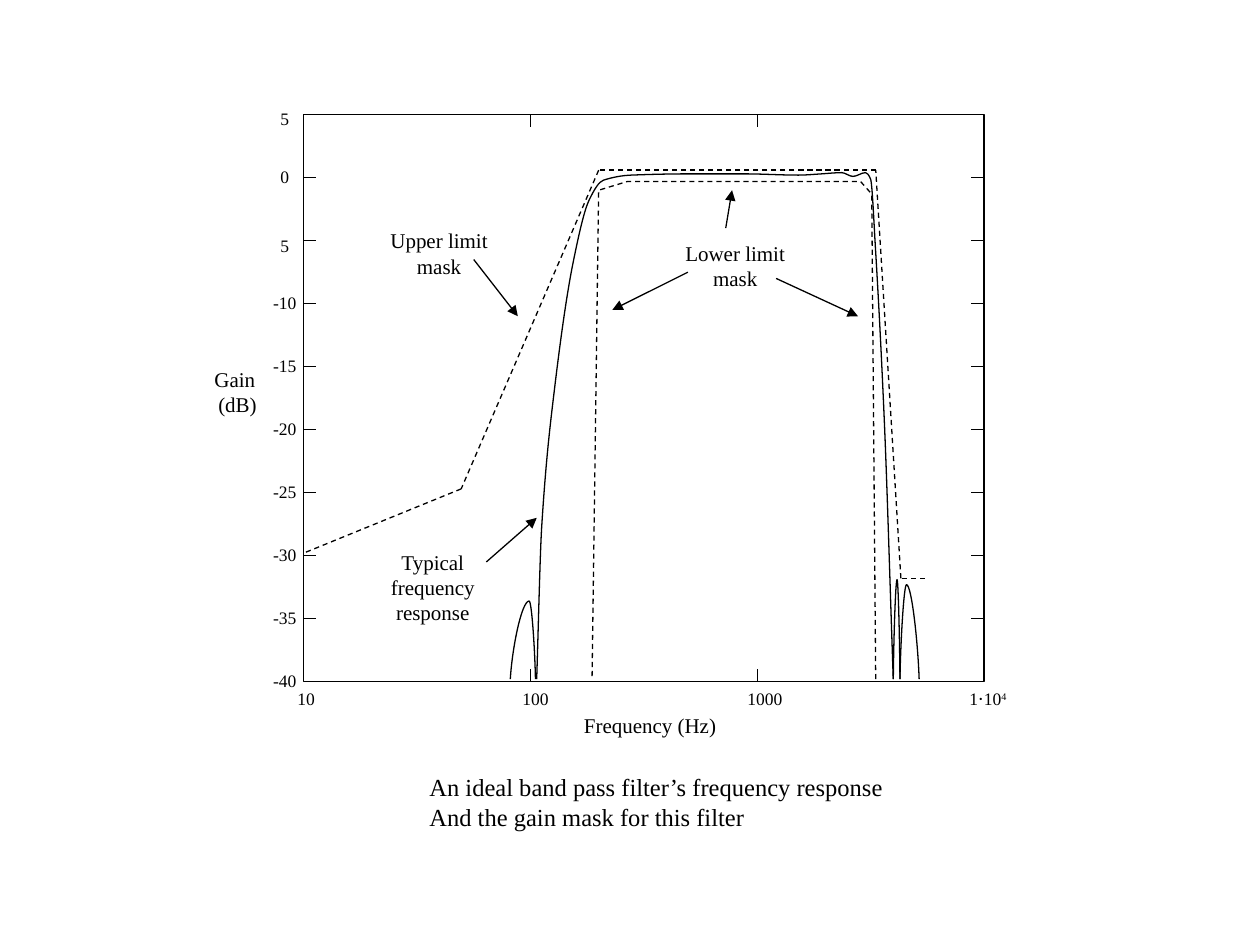
import itertools
import math
import pptx
import pptx.util
import pptx.dml.color
import pptx.enum.dml
import pptx.enum.shapes
import pptx.enum.text
import pptx.oxml
import pptx.oxml.ns

INCH = 2.54
FONT = "Times New Roman"
COLORS = {"ink": "000000"}

LEFT, TOP, DECADE, STEP, TICK = 2.41, 0.91, 1.8, 0.5, 0.1
LOW_HZ, DECADES = 10, 3
TOP_DB, STEP_DB, STEPS = 5, 5, 9
WIDE, HIGH = DECADE * DECADES, STEP * STEPS
FLOOR = -39.8

PASS_BAND = [
    (106.6, FLOOR), (112.2, -27.7), (127.5, -16.9), (154.5, -6.7), (182.4, -1.7),
    (210, -0.2), (278, 0.2), (495, 0.3), (880, 0.3), (1525, 0.2), (1920, 0.3),
    (2356, 0.4), (2644, 0.1), (3005, 0.4), (3162, -0.1), (3328, -5.8),
    (3640, -19.5), (3981, FLOOR),
]
LOBES = [
    {"start": 81.5, "peak": (98.7, -33.6), "end": 105.2},
    {"start": 3981, "peak": (4137, -31.9), "end": 4258},
    {"start": 4258, "peak": (4553, -32.3), "end": 5175},
]
UPPER = [(5480, -31.8), (4300, -31.8), (3330, 0.6), (200, 0.6), (49.5, -24.7), (10, -29.8)]
LOWER = [(3330, FLOOR), (3200, -1.3), (2855, -0.3), (268, -0.3), (200, -1), (187, FLOOR)]

GAINS = ["5", "0", "5", "-10", "-15", "-20", "-25", "-30", "-35", "-40"]
GAIN_DROPS = {0: 0.04, 2: 0.05}
FREQS = [(["10"], 0.02), (["100"], 0.04), (["1000"], 0.06), (["1⋅10", "4"], 0.03)]
NOTES = [
    ((1.51, 2.86, 0.75, 0.65), ["Gain ", "(dB)"]),
    ((4.36, 5.61, 1.6, 0.4), ["Frequency (Hz)"]),
    ((2.66, 1.76, 1.65, 0.6), ["Upper limit", "mask"]),
    ((5.01, 1.86, 1.65, 0.6), ["Lower limit", "mask"]),
    ((2.71, 4.31, 1.45, 0.85), ["Typical", "frequency", "response"]),
]
ARROWS = [
    ((5.76, 1.81), (5.81, 1.51)),
    ((3.76, 2.06), (4.11, 2.51)),
    ((5.46, 2.16), (4.86, 2.46)),
    ((6.16, 2.21), (6.81, 2.51)),
    ((3.86, 4.46), (4.26, 4.11)),
]
CAPTION = ["An ideal band pass filter’s frequency response", "And the gain mask for this filter"]


def size(*vals):
    return [pptx.util.Cm(val * INCH) for val in vals]


def ink():
    return pptx.dml.color.RGBColor.from_string(COLORS["ink"])


def node(tag, attrs=""):
    return pptx.oxml.parse_xml(f"<a:{tag} {pptx.oxml.ns.nsdecls('a')} {attrs}/>")


def plot(point):
    hertz, gain = point
    x = LEFT + DECADE * math.log10(hertz / LOW_HZ)
    y = TOP + STEP * (TOP_DB - gain) / STEP_DB
    return x, y


def smooth(knots):
    slopes = [(y2 - y1) / (x2 - x1) for (x1, y1), (x2, y2) in itertools.pairwise(knots)]
    turns = [2 * a * b / (a + b) if a * b > 0 else 0 for a, b in itertools.pairwise(slopes)]
    turns = [slopes[0], *turns, slopes[-1]]
    chain = [knots[0]]
    for n, ((x1, y1), (x2, y2)) in enumerate(itertools.pairwise(knots)):
        third = (x2 - x1) / 3
        chain += [(x1 + third, y1 + third * turns[n]), (x2 - third, y2 - third * turns[n + 1]), (x2, y2)]
    return chain


def arch(start, peak, end):
    top = plot(peak)

    def side(foot):
        x, y = plot((foot, FLOOR))
        run, rise = top[0] - x, top[1] - y
        return [(x, y), (x + 0.1 * run, y + 0.4 * rise), (x + 0.6 * run, top[1])]

    return [*side(start), top, *reversed(side(end))]


def pen(item, dash=False):
    item.line.color.rgb = ink()
    item.line.width = pptx.util.Pt(0.75)
    if dash:
        item.line.dash_style = pptx.enum.dml.MSO_LINE.DASH


def hollow(item, dash=False):
    item.fill.background()
    item.shadow.inherit = False
    pen(item, dash)


def line(art, start, end, dash=False, arrow=False):
    kind = pptx.enum.shapes.MSO_CONNECTOR.STRAIGHT
    item = art.add_connector(kind, *size(*start, *end))
    pen(item, dash)
    props = item._element.spPr
    if arrow:
        props.find(pptx.oxml.ns.qn("a:ln")).append(node("tailEnd", 'type="triangle"'))
    props.append(node("effectLst"))


def trace(art, points, dash=False):
    draft = art.build_freeform(*size(*points[0]))
    draft.add_line_segments([size(*point) for point in points[1:]], close=False)
    item = draft.convert_to_shape()
    hollow(item, dash)
    return item


def curve(art, chain):
    item = trace(art, chain)
    legs = list(item._element.iter(pptx.oxml.ns.qn("a:lnTo")))
    for n in range(0, len(legs), 3):
        bend = node("cubicBezTo")
        legs[n].addprevious(bend)
        for leg in legs[n:n + 3]:
            bend.append(leg[0])
            leg.getparent().remove(leg)


def text(art, box, rows, points, center=True):
    frame = art.add_textbox(*size(*box)).text_frame
    frame.word_wrap = center
    if not center:
        frame.auto_size = pptx.enum.text.MSO_AUTO_SIZE.SHAPE_TO_FIT_TEXT
    side = pptx.enum.text.PP_ALIGN
    for n, row in enumerate(rows):
        para = frame.add_paragraph() if n else frame.paragraphs[0]
        para.alignment = side.CENTER if center else side.LEFT
        for m, part in enumerate(row):
            run = para.add_run()
            run.text = part
            run.font.name = FONT
            run.font.size = pptx.util.Pt(points)
            run.font.color.rgb = ink()
            if m:
                run.font._element.set("baseline", "30000")


def graph(art):
    curve(art, smooth([plot(point) for point in PASS_BAND]))
    for lobe in LOBES:
        curve(art, arch(**lobe))
    for start, end in itertools.pairwise(map(plot, UPPER)):
        line(art, start, end, dash=True)
    trace(art, [plot(point) for point in LOWER], dash=True)


def axes(art):
    kind = pptx.enum.shapes.MSO_SHAPE.RECTANGLE
    hollow(art.add_shape(kind, *size(LEFT, TOP, WIDE, HIGH)))
    for x, n in itertools.product((LEFT, LEFT + WIDE - TICK), range(1, STEPS)):
        y = TOP + STEP * n
        line(art, (x, y), (x + TICK, y))
    for y, n in itertools.product((TOP, TOP + HIGH - TICK), range(1, DECADES)):
        x = LEFT + DECADE * n
        line(art, (x, y), (x, y + TICK))
    for n, label in enumerate(GAINS):
        y = TOP + STEP * n - 0.14 + GAIN_DROPS.get(n, 0)
        text(art, (LEFT - 0.4, y, 0.5, 0.5), [[label]], 10)
    for n, (parts, shift) in enumerate(FREQS):
        x = LEFT + DECADE * n + shift
        text(art, (x - 0.82, TOP + HIGH, 1.64, 0.4), [parts], 10)


def main():
    deck = pptx.Presentation()
    deck.slide_width, deck.slide_height = size(10, 7.5)
    slide = deck.slides.add_slide(deck.slide_layouts[6])
    art = slide.shapes.add_group_shape().shapes
    graph(art)
    axes(art)
    for box, rows in NOTES:
        text(art, box, [[row] for row in rows], 12)
    for start, end in ARROWS:
        line(art, start, end, arrow=True)
    text(slide.shapes, (3.31, 6.08, 3.84, 0.57), [[row] for row in CAPTION], 14, center=False)
    deck.save("out.pptx")


if __name__ == "__main__":
    main()
